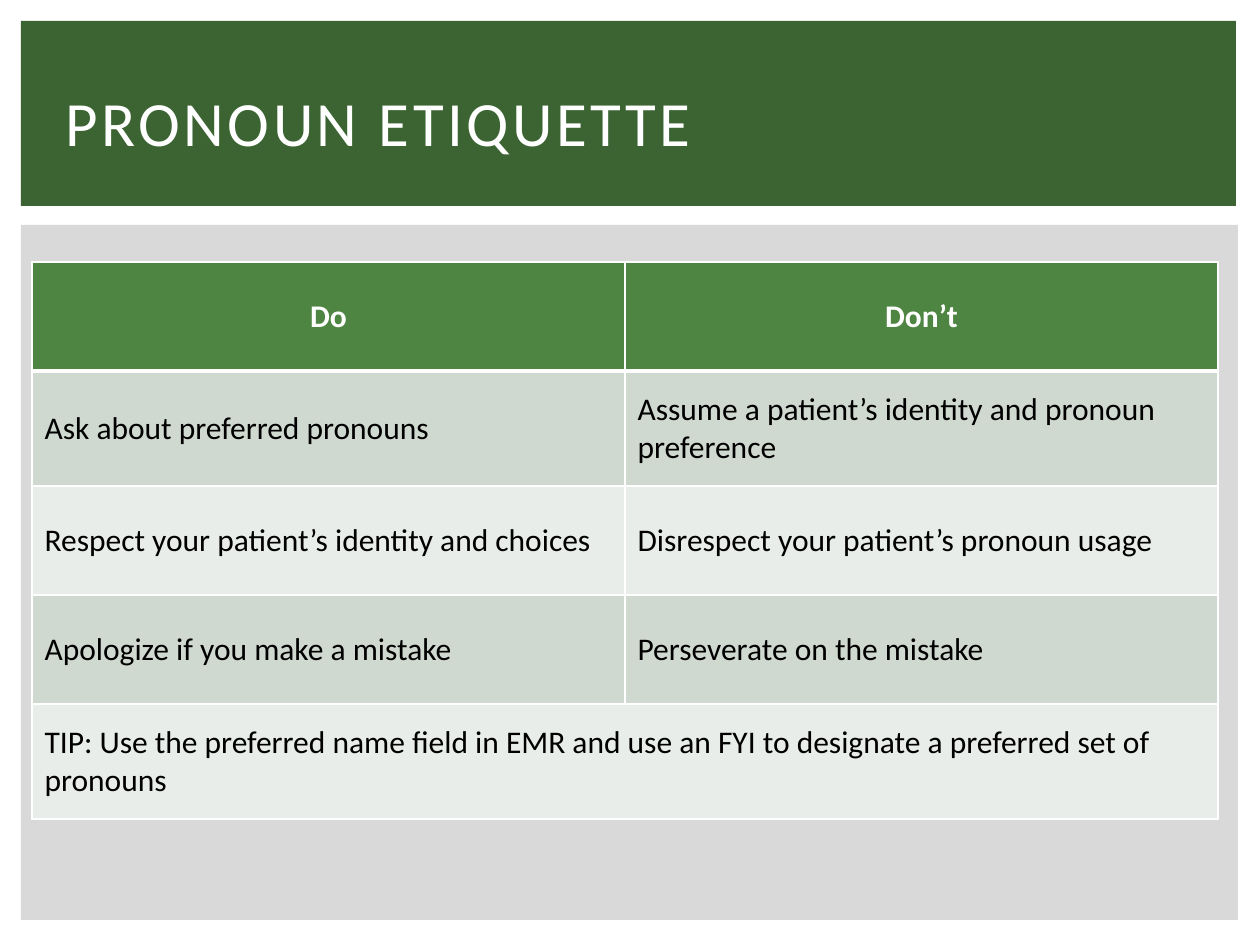
from dataclasses import dataclass

from lxml.etree import SubElement
from pptx import Presentation
from pptx.dml.color import RGBColor
from pptx.enum.shapes import MSO_SHAPE as Shape
from pptx.enum.text import MSO_ANCHOR as Anchor, MSO_AUTO_SIZE as AutoSize, PP_ALIGN as Align
from pptx.oxml.ns import qn
from pptx.util import Emu, Pt

PX = 914400 / 126
FONT = "Calibri"
WHITE = RGBColor(0xFF, 0xFF, 0xFF)
BLACK = RGBColor(0x00, 0x00, 0x00)
GREY = RGBColor(0xD9, 0xD9, 0xD9)
DARK_GREEN = RGBColor(0x3B, 0x64, 0x32)
GREEN = RGBColor(0x4E, 0x85, 0x42)
BANDS = (RGBColor(0xD0, 0xD9, 0xCF), RGBColor(0xE9, 0xED, 0xE9))

ROWS = (
    ("Do", "Don’t"),
    ("Ask about preferred pronouns", "Assume a patient’s identity and pronoun preference"),
    ("Respect your patient’s identity and choices", "Disrespect your patient’s pronoun usage"),
    ("Apologize if you make a mistake", "Perseverate on the mistake"),
    ("TIP: Use the preferred name field in EMR and use an FYI to designate "
     "a preferred set of pronouns", ""),
)
ROW_HEIGHTS = (109, 115, 109, 109, 115)


@dataclass(frozen=True)
class Area:
    left: int
    top: int
    width: int
    height: int

    def emu(self) -> tuple:
        return tuple(px(n) for n in (self.left, self.top, self.width, self.height))


@dataclass(frozen=True)
class Panel:
    area: Area
    color: RGBColor


PANELS = (
    Panel(Area(21, 225, 1217, 695), GREY),
    Panel(Area(21, 21, 1215, 185), DARK_GREEN),
)
TITLE_AREA = Area(53, 49, 1155, 145)
TABLE_AREA = Area(32, 262, 1186, sum(ROW_HEIGHTS))


def px(length: int) -> Emu:
    return Emu(round(length * PX))


def write(frame, text: str, *, size: int, color: RGBColor, bold: bool = False,
          align: Align = Align.LEFT, spacing: int = 0) -> None:
    """Put one formatted paragraph in a text frame; spacing is in points."""
    para = frame.paragraphs[0]
    para.alignment = align
    span = para.add_run()
    span.text = text
    font = span.font
    font.name, font.size, font.bold = FONT, Pt(size), bold
    font.color.rgb = color
    if spacing:
        span.font._element.set("spc", str(spacing * 100))


def draw_panel(slide, panel: Panel):
    box = slide.shapes.add_shape(Shape.RECTANGLE, *panel.area.emu())
    box.shadow.inherit = False
    box.fill.solid()
    box.fill.fore_color.rgb = panel.color
    box.line.fill.background()
    return box


def set_borders(cell, **widths: int) -> None:
    """Draw white cell borders; call before the fill is set."""
    properties = cell._tc.get_or_add_tcPr()
    for side in "LRTB":
        line = SubElement(properties, qn(f"a:ln{side}"), w=str(Pt(widths.get(side, 1))))
        fill = SubElement(line, qn("a:solidFill"))
        SubElement(fill, qn("a:srgbClr"), val=str(WHITE))


def draw_table(slide) -> None:
    table = slide.shapes.add_table(len(ROWS), 2, *TABLE_AREA.emu()).table
    for column in table.columns:
        column.width = px(TABLE_AREA.width // 2)
    for r, (texts, height) in enumerate(zip(ROWS, ROW_HEIGHTS)):
        table.rows[r].height = px(height)
        header = r == 0
        for c, text in enumerate(texts):
            cell = table.cell(r, c)
            set_borders(cell, B=3 if header else 1, T=3 if r == 1 else 1)
            cell.fill.solid()
            cell.fill.fore_color.rgb = GREEN if header else BANDS[(r - 1) % 2]
            cell.vertical_anchor = Anchor.MIDDLE
            if text:
                write(cell.text_frame, text, size=18, bold=header,
                      color=WHITE if header else BLACK,
                      align=Align.CENTER if header else Align.LEFT)
    # The tip runs across both columns
    last = len(ROWS) - 1
    table.cell(last, 0).merge(table.cell(last, 1))


def main() -> None:
    deck = Presentation()
    deck.slide_width, deck.slide_height = px(1260), px(945)
    page = deck.slides.add_slide(deck.slide_layouts[5])

    # Title
    title = page.shapes.title
    title.left, title.top, title.width, title.height = TITLE_AREA.emu()
    frame = title.text_frame
    frame.word_wrap = True
    frame.auto_size = AutoSize.NONE
    frame.vertical_anchor = Anchor.MIDDLE
    write(frame, "PRONOUN ETIQUETTE", size=36, color=WHITE, spacing=2)

    # Background panels, placed behind the title
    for panel in PANELS:
        title.element.addprevious(draw_panel(page, panel).element)

    # Do and don't table
    draw_table(page)
    deck.save("out.pptx")


if __name__ == "__main__":
    main()
